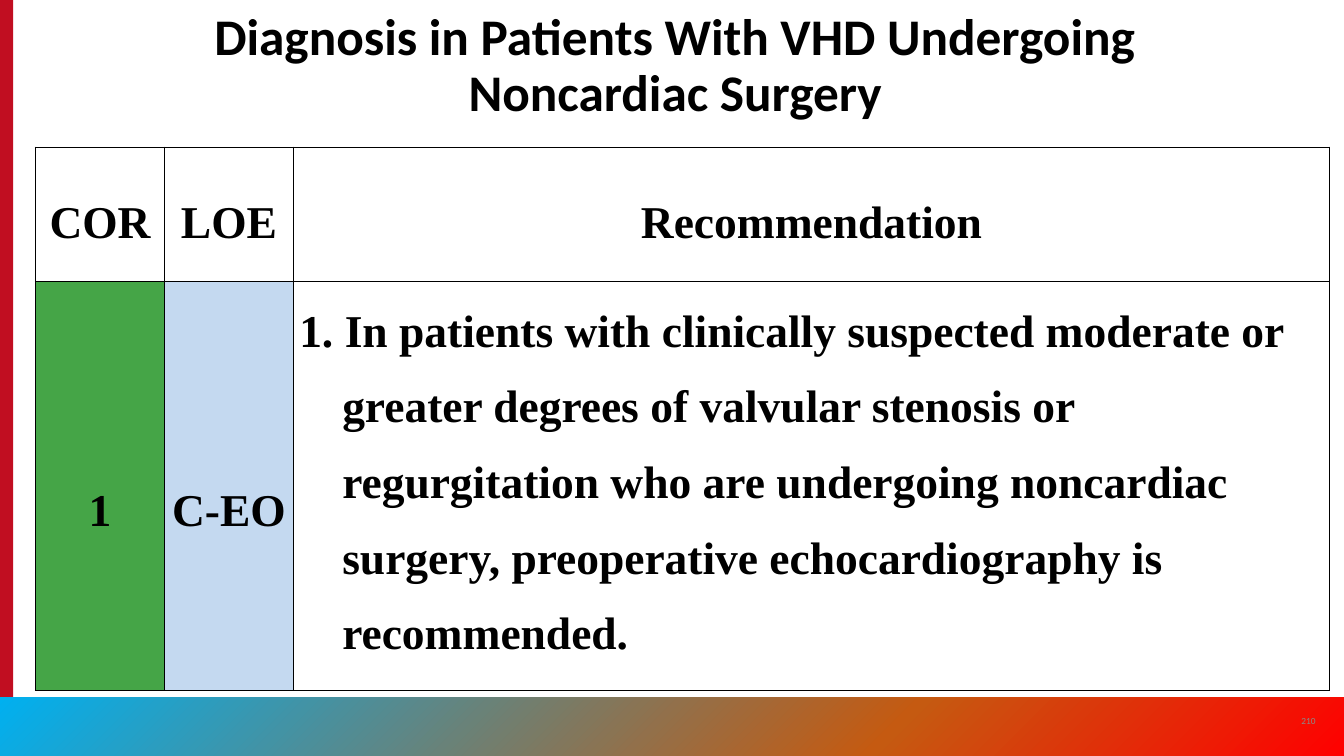
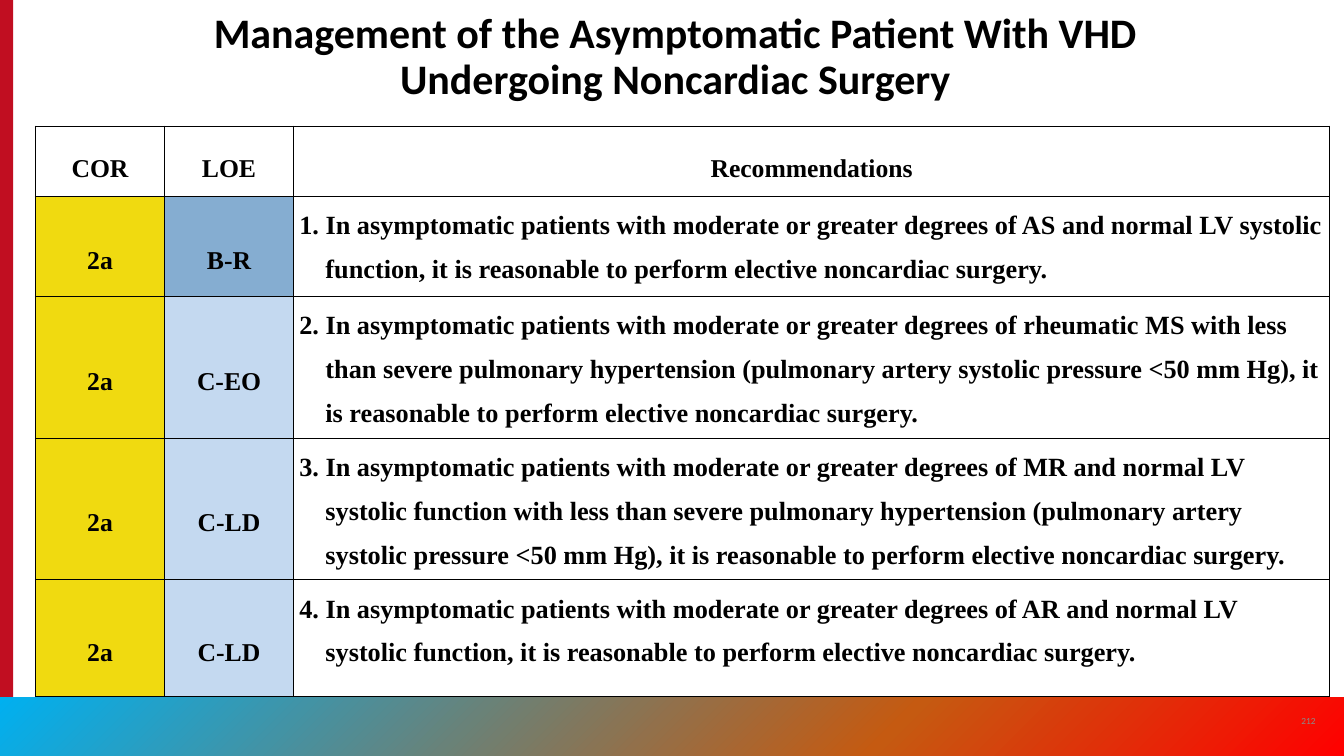
"""Build two guideline slides with recommendation tables for noncardiac surgery."""
from dataclasses import dataclass

from lxml import etree
from pptx import Presentation
from pptx import util as u
from pptx.dml import color
from pptx.enum import shapes, text
from pptx.oxml import ns

COLORS = {
    "black": "000000",
    "gray": "8A8B8A",
    "stripe": "C10E21",
    "band_start": "00B0F0",
    "band_middle": "C55A11",
    "band_end": "FF0000",
}
COR_FILLS = {"1": "45A547", "2a": "F0DA10"}
LOE_FILLS = {"B-R": "85ADD1", "C-EO": "C4D9F0", "C-LD": "C4D9F0"}
HEADING_FONT = "Calibri"
TABLE_FONT = "Times New Roman"
PAGE_WIDTH, PAGE_HEIGHT = 40.64, 22.86
TABLE_LEFT = 1.07
COLUMN_WIDTHS = (3.91, 3.89, 31.34)
CELL_INSET = 0.18
BAND_STOPS = ((0, "band_start"), (66, "band_middle"), (100, "band_end"))


@dataclass(frozen=True)
class Recommendation:
    cor: str
    loe: str
    wording: str
    height: float


@dataclass(frozen=True)
class GuidelinePage:
    number: str
    title: str
    title_size: float
    title_top: float
    title_height: float
    table_top: float
    header: str
    header_height: float
    label_size: float
    body_size: float
    hanging: float
    recommendations: tuple[Recommendation, ...]


PAGES = (
    GuidelinePage(
        "210", "Diagnosis in Patients With VHD Undergoing Noncardiac Surgery",
        44, 0.43, 3.4, 4.45, "Recommendation", 4.06, 39, 39, 1.3,
        (
            Recommendation(
                "1", "C-EO",
                "1. In patients with clinically suspected moderate or greater degrees of "
                "valvular stenosis or regurgitation who are undergoing noncardiac surgery, "
                "preoperative echocardiography is recommended.", 12.04),
        ),
    ),
    GuidelinePage(
        "212", "Management of the Asymptomatic Patient With VHD Undergoing Noncardiac Surgery",
        36, 0, 3.25, 3.81, "Recommendations", 2.13, 22, 22.5, 0.79,
        (
            Recommendation(
                "2a", "B-R",
                "1. In asymptomatic patients with moderate or greater degrees of AS and normal "
                "LV systolic function, it is reasonable to perform elective noncardiac "
                "surgery.", 3.02),
            Recommendation(
                "2a", "C-EO",
                "2. In asymptomatic patients with moderate or greater degrees of rheumatic MS "
                "with less than severe pulmonary hypertension (pulmonary artery systolic "
                "pressure <50 mm Hg), it is reasonable to perform elective noncardiac "
                "surgery.", 4.01),
            Recommendation(
                "2a", "C-LD",
                "3. In asymptomatic patients with moderate or greater degrees of MR and normal "
                "LV systolic function with less than severe pulmonary hypertension (pulmonary "
                "artery systolic pressure <50 mm Hg), it is reasonable to perform elective "
                "noncardiac surgery.", 4.01),
            Recommendation(
                "2a", "C-LD",
                "4. In asymptomatic patients with moderate or greater degrees of AR and normal "
                "LV systolic function, it is reasonable to perform elective noncardiac "
                "surgery.", 3.53),
        ),
    ),
)


def rgb(value: str) -> color.RGBColor:
    return color.RGBColor.from_string(value)


def add_span(para, wording: str, font: str, size: float, bold: bool, ink: str = "black") -> None:
    span = para.add_run()
    span.text = wording
    span.font.name = font
    span.font.size = u.Pt(size)
    span.font.bold = bold
    span.font.color.rgb = rgb(COLORS[ink])


def add_bar(page, left: float, top: float, width: float, height: float):
    bar = page.shapes.add_shape(
        shapes.MSO_SHAPE.RECTANGLE, u.Cm(left), u.Cm(top), u.Cm(width), u.Cm(height))
    bar.shadow.inherit = False
    bar.line.fill.background()
    return bar


def add_frame(page) -> None:
    stripe = add_bar(page, 0, 0, 0.4, PAGE_HEIGHT)
    stripe.fill.solid()
    stripe.fill.fore_color.rgb = rgb(COLORS["stripe"])

    band = add_bar(page, 0, 21.08, PAGE_WIDTH, 1.78)
    band.fill.gradient()
    gradient = band._element.spPr.find(ns.qn("a:gradFill"))
    stops = gradient.find(ns.qn("a:gsLst"))
    for stop in list(stops):
        stops.remove(stop)
    for percent, name in BAND_STOPS:
        stop = etree.SubElement(stops, ns.qn("a:gs"), pos=str(percent * 1000))
        etree.SubElement(stop, ns.qn("a:srgbClr"), val=COLORS[name])
    gradient.find(ns.qn("a:lin")).set("ang", str(45 * 60000))


def set_title(page, content: GuidelinePage) -> None:
    title = page.shapes.title
    title.left, title.top = u.Cm(5.72), u.Cm(content.title_top)
    title.width, title.height = u.Cm(29.41), u.Cm(content.title_height)
    frame = title.text_frame
    frame.word_wrap = True
    frame.auto_size = text.MSO_AUTO_SIZE.NONE
    frame.vertical_anchor = text.MSO_ANCHOR.BOTTOM
    para = frame.paragraphs[0]
    para.alignment = text.PP_ALIGN.CENTER
    para.line_spacing = 0.9
    add_span(para, content.title, HEADING_FONT, content.title_size, True)


def add_page_number(page, number: str) -> None:
    box = page.shapes.add_textbox(u.Cm(38.96), u.Cm(21.18), u.Cm(1.22), u.Cm(1.22))
    frame = box.text_frame
    frame.word_wrap = True
    frame.vertical_anchor = text.MSO_ANCHOR.MIDDLE
    para = frame.paragraphs[0]
    para.alignment = text.PP_ALIGN.CENTER
    add_span(para, number, HEADING_FONT, 8, False, "gray")


def format_cell(cell, fill: str | None) -> None:
    cell.margin_left = cell.margin_right = u.Cm(CELL_INSET)
    cell.margin_top = cell.margin_bottom = 0
    properties = cell._tc.get_or_add_tcPr()
    for side in ("lnL", "lnR", "lnT", "lnB"):
        border = etree.SubElement(properties, ns.qn(f"a:{side}"), w=str(u.Pt(1)))
        paint = etree.SubElement(border, ns.qn("a:solidFill"))
        etree.SubElement(paint, ns.qn("a:srgbClr"), val=COLORS["black"])
    if fill:
        cell.fill.solid()
        cell.fill.fore_color.rgb = rgb(fill)
    else:
        cell.fill.background()


def write_label(cell, wording: str, size: float, fill: str | None = None) -> None:
    format_cell(cell, fill)
    cell.vertical_anchor = text.MSO_ANCHOR.MIDDLE if fill else text.MSO_ANCHOR.TOP
    para = cell.text_frame.paragraphs[0]
    para.alignment = text.PP_ALIGN.CENTER
    para.line_spacing = 2.0
    add_span(para, wording, TABLE_FONT, size, True)


def write_recommendation(cell, wording: str, size: float, hanging: float) -> None:
    format_cell(cell, None)
    para = cell.text_frame.paragraphs[0]
    para.line_spacing = 1.5
    properties = para._p.get_or_add_pPr()
    properties.set("marL", str(u.Cm(hanging)))
    properties.set("indent", str(-u.Cm(hanging)))
    add_span(para, wording, TABLE_FONT, size, True)


def add_recommendations(page, content: GuidelinePage) -> None:
    heights = [content.header_height, *(item.height for item in content.recommendations)]
    table = page.shapes.add_table(
        len(heights), len(COLUMN_WIDTHS), u.Cm(TABLE_LEFT), u.Cm(content.table_top),
        u.Cm(sum(COLUMN_WIDTHS)), u.Cm(sum(heights))).table
    table.first_row = table.horz_banding = False
    for column, width in zip(table.columns, COLUMN_WIDTHS):
        column.width = u.Cm(width)
    for row, height in zip(table.rows, heights):
        row.height = u.Cm(height)
    for index, heading in enumerate(("COR", "LOE", content.header)):
        write_label(table.cell(0, index), heading, content.label_size)
    for index, item in enumerate(content.recommendations, start=1):
        write_label(table.cell(index, 0), item.cor, content.label_size, COR_FILLS[item.cor])
        write_label(table.cell(index, 1), item.loe, content.label_size, LOE_FILLS[item.loe])
        write_recommendation(
            table.cell(index, 2), item.wording, content.body_size, content.hanging)


def main() -> None:
    deck = Presentation()
    deck.slide_width, deck.slide_height = u.Cm(PAGE_WIDTH), u.Cm(PAGE_HEIGHT)
    title_only = deck.slide_layouts.get_by_name("Title Only")
    for content in PAGES:
        page = deck.slides.add_slide(title_only)
        add_frame(page)
        set_title(page, content)
        add_page_number(page, content.number)
        add_recommendations(page, content)
    deck.save("out.pptx")


if __name__ == "__main__":
    main()
